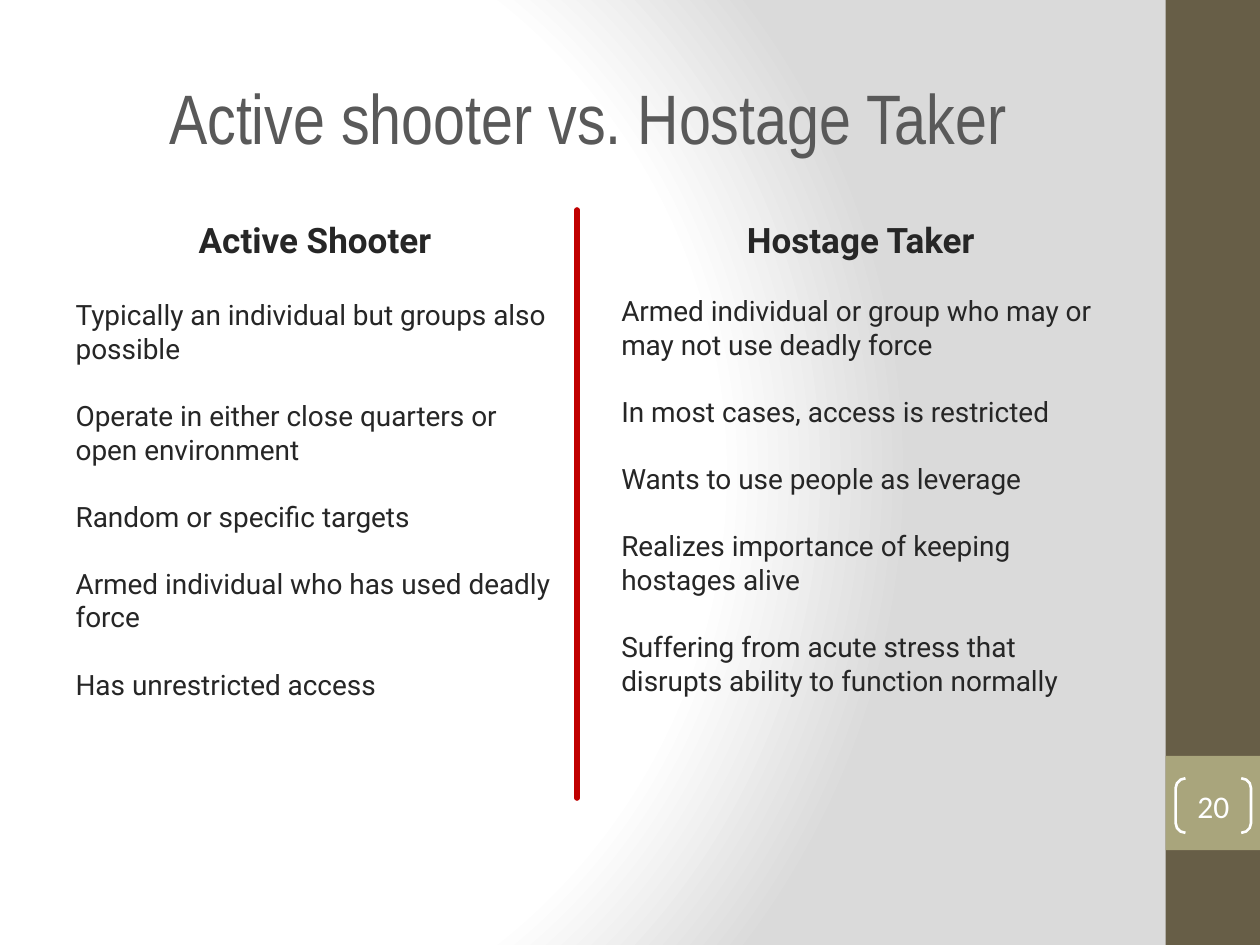
import pptx
import pptx.dml.color
import pptx.enum.shapes
import pptx.enum.text
import pptx.oxml
import pptx.oxml.ns
import pptx.util
from dataclasses import dataclass

Cm = pptx.util.Cm
Pt = pptx.util.Pt
ALIGN = pptx.enum.text.PP_ALIGN
ANCHOR = pptx.enum.text.MSO_ANCHOR
SHAPE = pptx.enum.shapes.MSO_SHAPE


@dataclass(frozen=True)
class Theme:
    paper: str = "FFFFFF"
    shade: str = "DADADA"
    sidebar: str = "675E47"
    badge: str = "A9A57C"
    title: str = "595959"
    text: str = "262626"
    divider: str = "C00000"
    title_font: str = "Arial Narrow"
    body_font: str = "Roboto"
    number_font: str = "Calibri"
    title_size: float = 40
    heading_size: float = 20
    body_size: float = 16
    number_size: float = 18
    item_gap: float = 19.2


THEME = Theme()

SHOOTER_POINTS = [
    "Typically an individual but groups also possible",
    "Operate in either close quarters or open environment",
    "Random or specific targets",
    "Armed individual who has used deadly force",
    "Has unrestricted access",
]
HOSTAGE_POINTS = [
    "Armed individual or group who may or may not use deadly force",
    "In most cases, access is restricted",
    "Wants to use people as leverage",
    "Realizes importance of keeping hostages alive",
    "Suffering from acute stress that disrupts ability to function normally",
]


def rgb(value):
    return pptx.dml.color.RGBColor.from_string(value)


def write_text(paragraph, text, *, size, font, color, bold=False,
               align=ALIGN.LEFT, before=0):
    run = paragraph.add_run()
    run.text = text
    run.font.size = Pt(size)
    run.font.name = font
    run.font.bold = bold
    run.font.color.rgb = rgb(color)
    paragraph.alignment = align
    paragraph.space_before = Pt(before)
    # Flush left, without a bullet
    properties = paragraph._p.get_or_add_pPr()
    properties.set("marL", "0")
    properties.set("indent", "0")
    properties.append(pptx.oxml.parse_xml(
        f'<a:buNone {pptx.oxml.ns.nsdecls("a")}/>'))


def place(shape, box):
    shape.left, shape.top, shape.width, shape.height = map(Cm, box)


def add_box(slide, preset, box, fill=None, line=None):
    shape = slide.shapes.add_shape(preset, *map(Cm, box))
    shape.shadow.inherit = False
    if fill:
        shape.fill.solid()
        shape.fill.fore_color.rgb = rgb(fill)
    else:
        shape.fill.background()
    if line:
        shape.line.color.rgb = rgb(line)
        shape.line.width = Pt(1.5)
    else:
        shape.line.fill.background()
    return shape


def paint_background(slide):
    stops = "".join(
        f'<a:gs pos="{percent * 1000}"><a:srgbClr val="{color}"/></a:gs>'
        for percent, color in
        [(0, THEME.paper), (75, THEME.paper), (100, THEME.shade)])
    background = pptx.oxml.parse_xml(
        f'<p:bg {pptx.oxml.ns.nsdecls("p", "a")}><p:bgPr>'
        f'<a:gradFill rotWithShape="1"><a:gsLst>{stops}</a:gsLst>'
        '<a:path path="circle">'
        '<a:fillToRect l="20000" t="50000" r="100000" b="50000"/></a:path>'
        '</a:gradFill><a:effectLst/></p:bgPr></p:bg>')
    slide._element.cSld.insert(0, background)


def add_sidebar(slide, box, number):
    left, top, width, height = box
    add_box(slide, SHAPE.RECTANGLE, box, fill=THEME.sidebar)
    # Square badge with the bracketed slide number
    badge_top = top + height * 0.8
    add_box(slide, SHAPE.RECTANGLE, (left, badge_top, width, width),
            fill=THEME.badge)
    brackets = add_box(slide, SHAPE.DOUBLE_BRACKET,
                       (left + 0.2, badge_top + 0.45, 1.52, 1.1),
                       line=THEME.paper)
    brackets.adjustments[0] = 0.18
    frame = brackets.text_frame
    frame.margin_left = frame.margin_right = 0
    frame.margin_top = frame.margin_bottom = 0
    frame.vertical_anchor = ANCHOR.MIDDLE
    write_text(frame.paragraphs[0], number, size=THEME.number_size,
               font=THEME.number_font, color=THEME.paper, align=ALIGN.CENTER)


def fill_title(placeholder, box, text):
    place(placeholder, box)
    frame = placeholder.text_frame
    frame.auto_size = pptx.enum.text.MSO_AUTO_SIZE.NONE
    frame.vertical_anchor = ANCHOR.MIDDLE
    write_text(frame.paragraphs[0], text, size=THEME.title_size,
               font=THEME.title_font, color=THEME.title, align=ALIGN.CENTER)


def fill_column(placeholder, box, heading, points, first_gap):
    place(placeholder, box)
    frame = placeholder.text_frame
    frame.auto_size = pptx.enum.text.MSO_AUTO_SIZE.NONE
    frame.vertical_anchor = ANCHOR.TOP
    write_text(frame.paragraphs[0], heading, size=THEME.heading_size,
               font=THEME.body_font, color=THEME.text, bold=True,
               align=ALIGN.CENTER)
    for index, point in enumerate(points):
        write_text(frame.add_paragraph(), point, size=THEME.body_size,
                   font=THEME.body_font, color=THEME.text,
                   before=THEME.item_gap if index else first_gap)


def add_divider(slide, x, top, bottom):
    divider = slide.shapes.add_connector(
        pptx.enum.shapes.MSO_CONNECTOR.STRAIGHT,
        Cm(x), Cm(top), Cm(x), Cm(bottom))
    divider.line.color.rgb = rgb(THEME.divider)
    divider.line.width = Pt(3)
    divider.line._get_or_add_ln().set("cap", "rnd")
    divider._element.spPr.append(pptx.oxml.parse_xml(
        f'<a:effectLst {pptx.oxml.ns.nsdecls("a")}/>'))


def main():
    presentation = pptx.Presentation()
    presentation.slide_width = Cm(25.4)
    presentation.slide_height = Cm(19.05)
    # The "Two Content" layout
    slide = presentation.slides.add_slide(presentation.slide_layouts[3])
    title, left_body, right_body = slide.placeholders

    paint_background(slide)
    add_sidebar(slide, (23.5, 0, 1.9, 19.05), "20")
    fill_title(title, (1.27, 0.76, 21.16, 3.18),
               "Active shooter vs. Hostage Taker")
    fill_column(left_body, (1.27, 4.27, 10.16, 12.75),
                "Active Shooter", SHOOTER_POINTS, first_gap=21.5)
    fill_column(right_body, (12.27, 4.27, 10.16, 10.97),
                "Hostage Taker", HOSTAGE_POINTS, first_gap=THEME.item_gap)
    add_divider(slide, 11.63, 4.23, 16.09)

    presentation.save("out.pptx")


if __name__ == "__main__":
    main()
